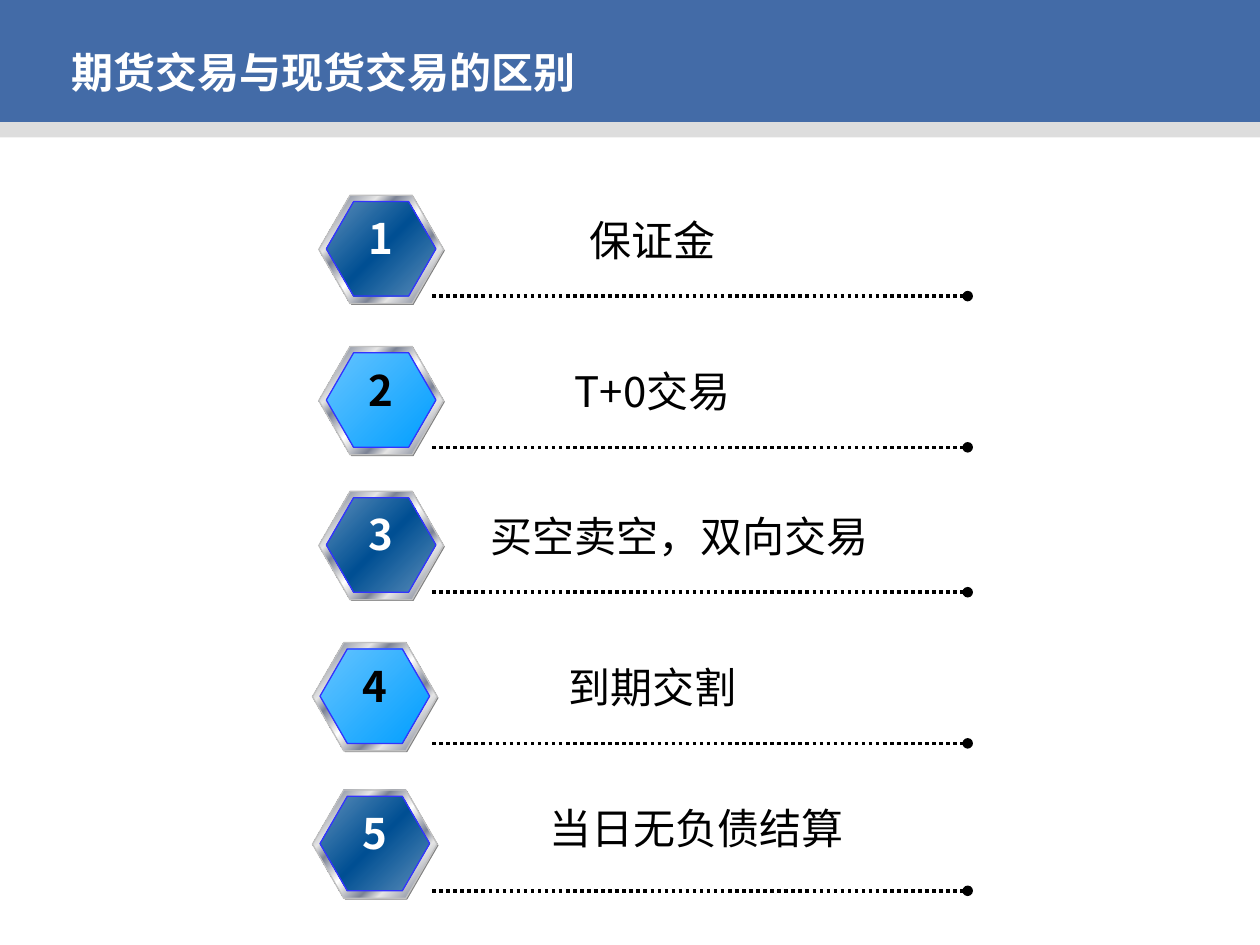
from dataclasses import dataclass

from lxml import etree
from pptx import Presentation
from pptx import util as u
from pptx.dml.color import RGBColor
from pptx.enum import dml, shapes, text
from pptx.oxml import ns

In = u.Inches


@dataclass(frozen=True)
class Theme:
    band: str = "436BA7"
    strip: str = "DDDDDD"
    white: str = "FFFFFF"
    black: str = "000000"
    shade: str = "808080"
    rim: str = "C0C0C0"
    edge: str = "3333FF"
    size: int = 24
    thin: float = 0.75
    rule: float = 2
    head: str = "Arial"
    body: str = "Noto Sans CJK SC"
    steel: tuple = (
        (0, "E6E6E6"), (8, "7D8496"), (26, "E6E6E6"), (34, "7D8496"),
        (46, "E6E6E6"), (50, "FFFFFF"), (54, "E6E6E6"), (66, "7D8496"),
        (74, "E6E6E6"), (92, "7D8496"), (100, "E6E6E6"))
    navy: tuple = ((0, "5D8FBA"), (50, "004F93"), (100, "5D8FBA"))
    sky: tuple = ((0, "65C4FF"), (100, "009EFF"))


T = Theme()


def rgb(code):
    return RGBColor.from_string(code)


def node(root, tag, **attrs):
    return etree.SubElement(root, ns.qn(tag), attrs)


def write(shape, words, font=T.body, color=T.black, bold=False,
          align=text.PP_ALIGN.CENTER, anchor=text.MSO_ANCHOR.TOP, wrap=True):
    frame = shape.text_frame
    frame.word_wrap = wrap
    frame.vertical_anchor = anchor
    para = frame.paragraphs[0]
    para.alignment = align
    run = para.add_run()
    run.text = words
    run.font.size = u.Pt(T.size)
    run.font.bold = bold
    run.font.color.rgb = rgb(color)
    run.font.name = font
    node(run.font._element, "a:ea", typeface=T.body)


def blend(shape, stops):
    grad = etree.Element(ns.qn("a:gradFill"), rotWithShape="1")
    row = node(grad, "a:gsLst")
    for pos, code in stops:
        stop = node(row, "a:gs", pos=str(pos * 1000))
        node(stop, "a:srgbClr", val=code)
    node(grad, "a:lin", ang="2700000", scaled="1")
    props = shape.element.spPr
    props.find(ns.qn("a:prstGeom")).addnext(grad)


def add(slide, kind, box, fill, line=None):
    shape = slide.shapes.add_shape(kind, *map(In, box))
    shape.shadow.inherit = False
    if isinstance(fill, str):
        shape.fill.solid()
        shape.fill.fore_color.rgb = rgb(fill)
    else:
        blend(shape, fill)
    if line:
        shape.line.color.rgb = rgb(line)
        shape.line.width = u.Pt(T.thin)
    else:
        shape.line.fill.background()
    return shape


def header(slide, x, y, w, h):
    rect = shapes.MSO_SHAPE.RECTANGLE
    add(slide, rect, (x, y, w, h - 0.05), T.band)
    add(slide, rect, (x, y + h - 0.12, w, 0.12), T.strip)
    title = slide.shapes.title
    title.left, title.top = In(x + 0.47), In(y + 0.32)
    title.width, title.height = In(6.01), In(0.5)
    write(title, "期货交易与现货交易的区别", font=T.head, color=T.white, bold=True,
          align=text.PP_ALIGN.LEFT, anchor=text.MSO_ANCHOR.MIDDLE)
    slide.shapes.element.append(title.element)


def badge(slide, x, y, num):
    odd = num % 2
    for dx, dy, w, h, fill, line in (
            (0.01, 0.01, 0.99, 0.86, T.shade, None),
            (0, 0, 0.99, 0.86, T.steel, T.rim),
            (0.06, 0.05, 0.87, 0.75, T.navy if odd else T.sky, T.edge)):
        hexa = add(slide, shapes.MSO_SHAPE.HEXAGON,
                   (x + dx, y + dy, w, h), fill, line)
        hexa.adjustments[0] = 0.289
        hexa.adjustments[1] = 1.155
    box = slide.shapes.add_textbox(In(x + 0.25), In(y + 0.09), In(0.49), In(0.61))
    write(box, str(num), color=T.white if odd else T.black, bold=True, wrap=False)


def rule(slide, x, y, w):
    line = slide.shapes.add_connector(
        shapes.MSO_CONNECTOR.STRAIGHT, In(x), In(y), In(x + w), In(y))
    line.line.color.rgb = rgb(T.black)
    line.line.width = u.Pt(T.rule)
    line.line.dash_style = dml.MSO_LINE.ROUND_DOT
    node(line.line._get_or_add_ln(), "a:tailEnd", type="oval")
    node(line.element.spPr, "a:effectLst")


def item(slide, x, y, num, words, left, drop):
    badge(slide, x, y, num)
    rule(slide, 3.43, y + 0.8, 4.25)
    box = slide.shapes.add_textbox(In(left), In(y + drop), In(5.1), In(0.61))
    write(box, words)


def main():
    deck = Presentation()
    deck.slide_width, deck.slide_height = In(10), In(7.5)
    slide = deck.slides.add_slide(deck.slide_layouts[5])
    header(slide, 0, 0, 10, 1.09)
    rows = (
        (2.53, 1.55, "保证金", 2.63, 0.1),
        (2.53, 2.75, "T+0交易", 2.63, 0.1),
        (2.53, 3.9, "买空卖空，双向交易", 2.84, 0.1),
        (2.48, 5.1, "到期交割", 2.63, 0.1),
        (2.48, 6.27, "当日无负债结算", 2.98, 0.05))
    for num, (x, y, words, left, drop) in enumerate(rows, 1):
        item(slide, x, y, num, words, left, drop)
    deck.save("out.pptx")


if __name__ == "__main__":
    main()
